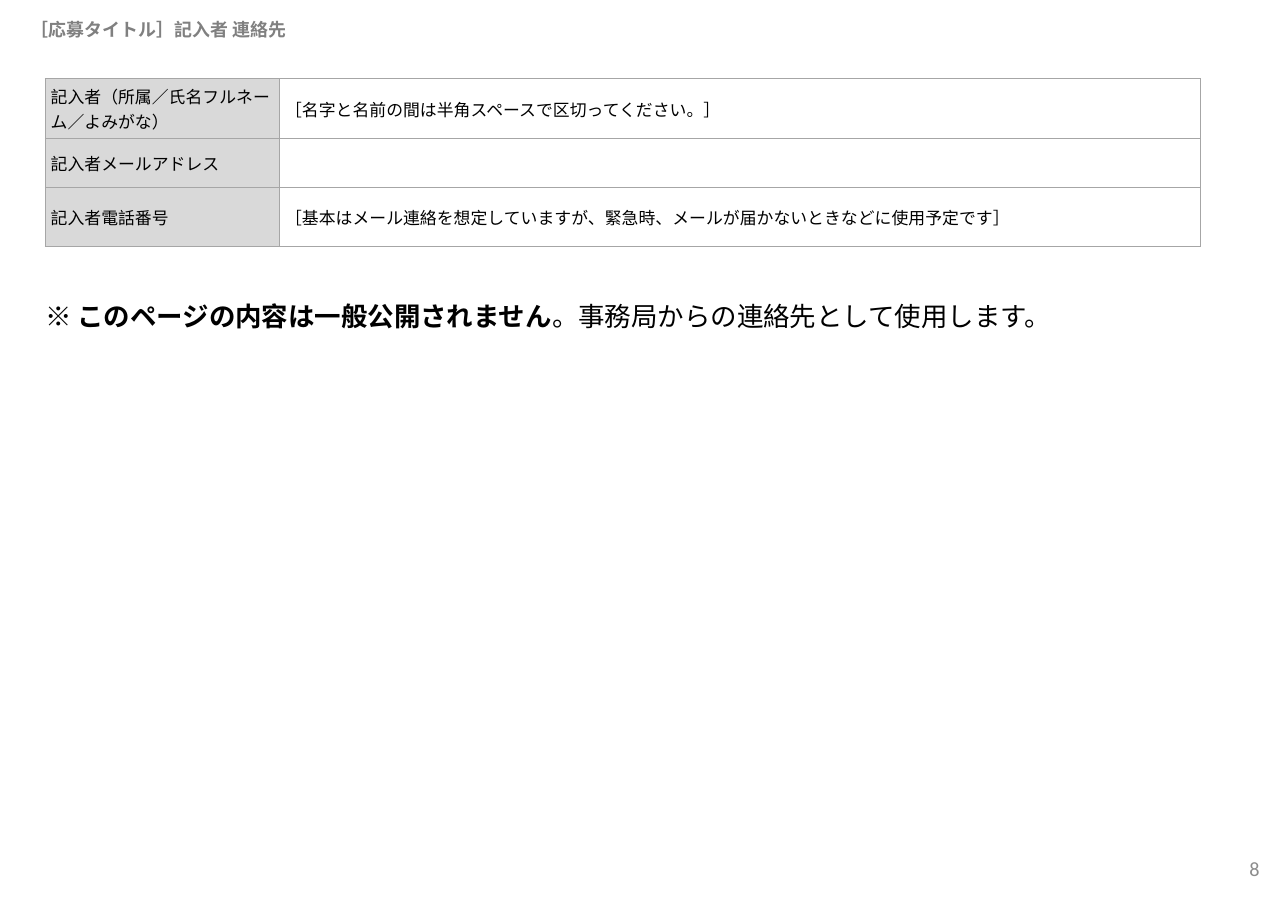
from lxml.etree import SubElement
from pptx import Presentation
from pptx.dml.color import RGBColor
from pptx.enum.text import MSO_ANCHOR, MSO_AUTO_SIZE, PP_ALIGN
from pptx.oxml import parse_xml
from pptx.oxml.ns import nsdecls
from pptx.util import Pt


def color(code):
    return RGBColor.from_string(code)


def style(para, name, size, code, bold=False):
    para.font.name = name
    para.font.size = Pt(size)
    para.font.bold = bold
    para.font.color.rgb = color(code)


deck = Presentation()
deck.slide_width, deck.slide_height = Pt(841.68), Pt(595.44)
page = deck.slides.add_slide(deck.slide_layouts[5])

# Title
title = page.shapes.title
title.left, title.top, title.width, title.height = Pt(13), Pt(11.5), Pt(818), Pt(17.3)
title.text_frame.auto_size = MSO_AUTO_SIZE.NONE
title.text_frame.vertical_anchor = MSO_ANCHOR.MIDDLE
para = title.text_frame.paragraphs[0]
para.text = "［応募タイトル］記入者 連絡先"
para.alignment = PP_ALIGN.LEFT
para.line_spacing = 0.9
style(para, "Arial", 11.7, "808080", bold=True)

# Contact table
entries = [
    ("記入者（所属／氏名フルネーム／よみがな）", "［名字と名前の間は半角スペースで区切ってください。］"),
    ("記入者メールアドレス", ""),
    ("記入者電話番号", "［基本はメール連絡を想定していますが、緊急時、メールが届かないときなどに使用予定です］"),
]
row_heights = [38.9, 31.7, 38.9]
column_widths = [153.2, 601.4]
table = page.shapes.add_table(
    len(entries), 2, Pt(29.5), Pt(51.4), Pt(sum(column_widths)), Pt(sum(row_heights))
).table
for column, width in zip(table.columns, column_widths):
    column.width = Pt(width)
for row, height, texts in zip(table.rows, row_heights, entries):
    row.height = Pt(height)
    for cell, text, fill in zip(row.cells, texts, ("D9D9D9", "FFFFFF")):
        cell.margin_left = cell.margin_right = Pt(3.6)
        cell.margin_top = cell.margin_bottom = Pt(3.6)
        cell.vertical_anchor = MSO_ANCHOR.MIDDLE
        cell.fill.solid()
        cell.fill.fore_color.rgb = color(fill)
        para = cell.text_frame.paragraphs[0]
        para.text = text
        style(para, "Calibri", 11, "000000")
        # Thin grey borders go before the fill
        for place, side in enumerate(("lnL", "lnR", "lnT", "lnB")):
            border = parse_xml(
                f'<a:{side} {nsdecls("a")} w="{Pt(0.25)}"><a:solidFill>'
                f'<a:srgbClr val="A6A6A6"/></a:solidFill></a:{side}>'
            )
            cell._tc.tcPr.insert(place, border)

# Privacy note
note = page.shapes.add_textbox(Pt(29.5), Pt(195.8), Pt(666.7), Pt(20.9)).text_frame
note.margin_left = note.margin_right = note.margin_top = note.margin_bottom = 0
note.word_wrap = False
note.auto_size = MSO_AUTO_SIZE.SHAPE_TO_FIT_TEXT
para = note.paragraphs[0]
style(para, "Calibri", 17.3, "000000")
for text, bold in (
    ("※ ", False),
    ("このページの内容は一般公開されません", True),
    ("。事務局からの連絡先として使用します。", False),
):
    span = para.add_run()
    span.text = text
    span.font.bold = bold

# Page number
number = page.shapes.add_textbox(Pt(640.8), Pt(551.5), Pt(189.4), Pt(31.7)).text_frame
number.word_wrap = True
number.vertical_anchor = MSO_ANCHOR.MIDDLE
para = number.paragraphs[0]
para.text = "8"
para.alignment = PP_ALIGN.RIGHT
style(para, "Calibri", 13.2, "8C8C8C")

deck.save("out.pptx")
